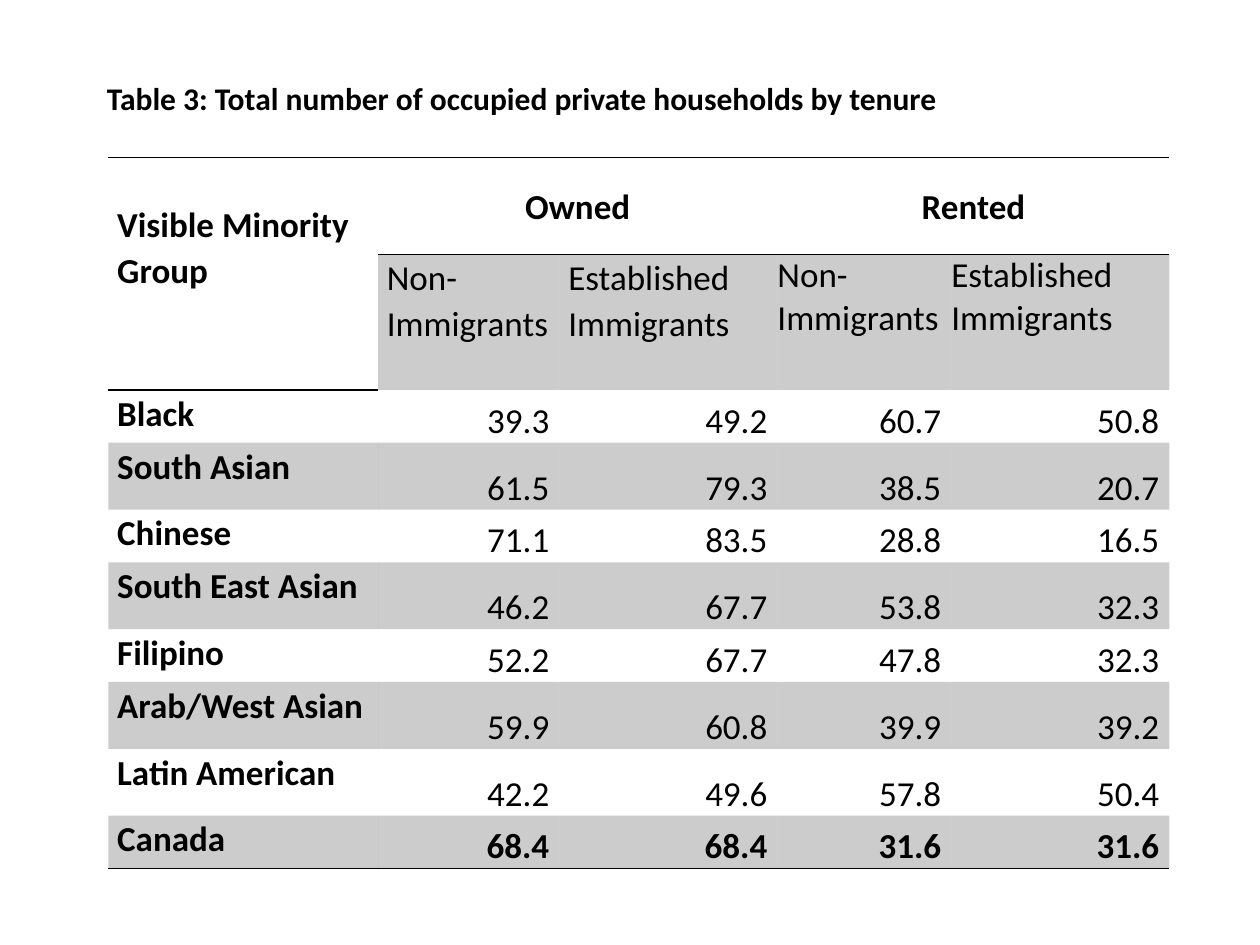
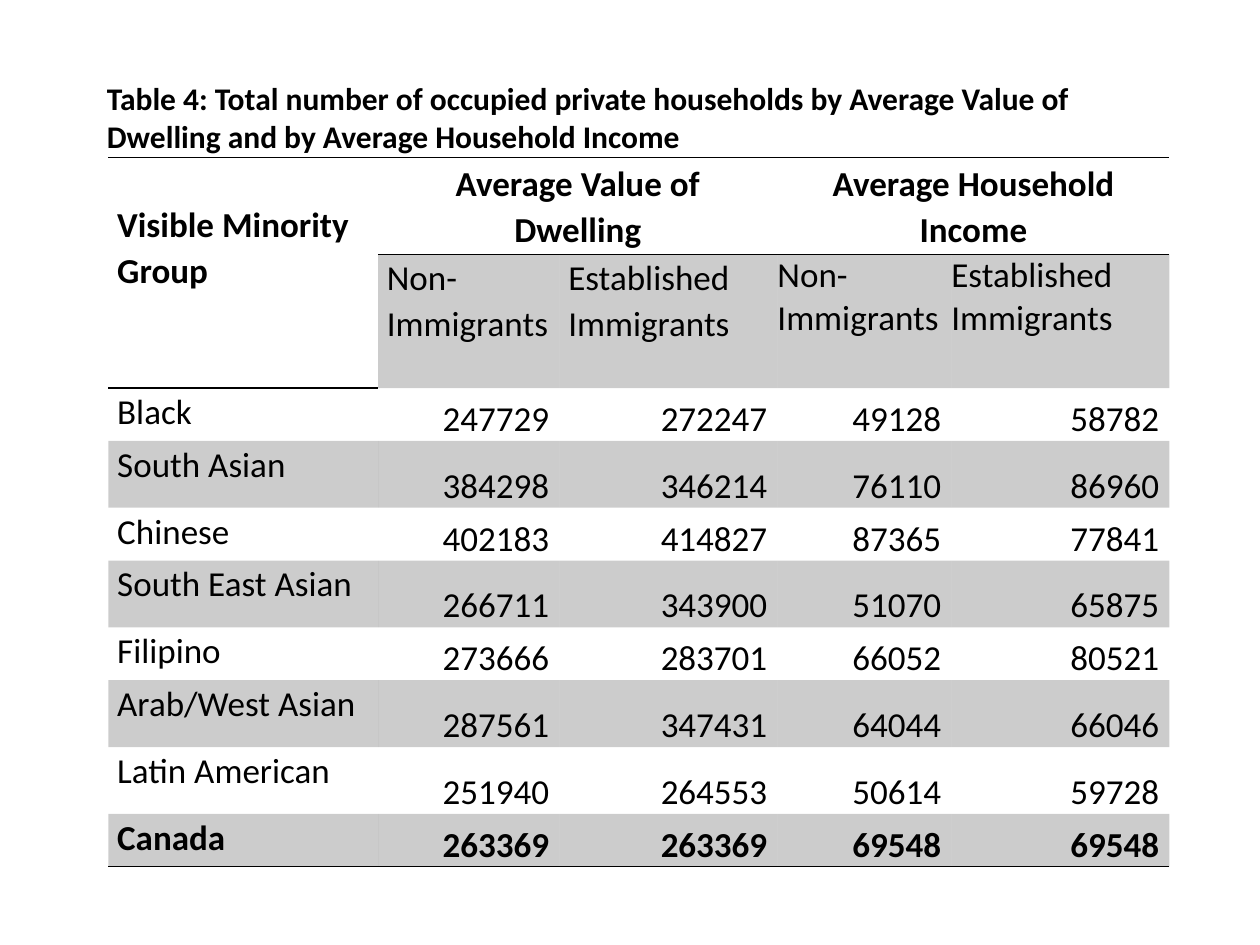
from lxml import etree
from pptx import Presentation
from pptx import util as u
from pptx.dml.color import RGBColor
from pptx.enum import text
from pptx.oxml import ns

# Shared look
BLACK = RGBColor(0, 0, 0)
FONT = "Calibri"
BAND_OPACITY = 20000
PLAIN_STYLE = "{2D5ABB26-0587-4C30-8999-92F81FD0307C}"
COLUMN_WIDTHS = [154.1, 103.7, 124.6, 99.4, 124.6]
ROW_HEIGHTS = [55.4, 55.4, 30.2, 38.2, 30.2, 38.2, 30.2, 38.2, 38.2, 30.2]
LOOSE = 1.07

LABEL_CELL = {"margin_left": u.Pt(5.1), "margin_right": u.Pt(5.1)}
GROUP_CELL = {**LABEL_CELL, "vertical_anchor": text.MSO_ANCHOR.MIDDLE}
CORNER_CELL = {**LABEL_CELL, "margin_top": u.Pt(25)}
TIGHT_CELL = {"margin_left": 0, "margin_right": 0}
NUMBER_CELL = {"margin_left": 0, "margin_right": u.Pt(5.8),
               "vertical_anchor": text.MSO_ANCHOR.BOTTOM}

# Content
MINORITY_GROUPS = ["Black", "South Asian", "Chinese", "South East Asian",
                   "Filipino", "Arab/West Asian", "Latin American", "Canada"]
TENURE = [
    ("39.3", "49.2", "60.7", "50.8"),
    ("61.5", "79.3", "38.5", "20.7"),
    ("71.1", "83.5", "28.8", "16.5"),
    ("46.2", "67.7", "53.8", "32.3"),
    ("52.2", "67.7", "47.8", "32.3"),
    ("59.9", "60.8", "39.9", "39.2"),
    ("42.2", "49.6", "57.8", "50.4"),
    ("68.4", "68.4", "31.6", "31.6"),
]
VALUE_AND_INCOME = [
    ("247729", "272247", "49128", "58782"),
    ("384298", "346214", "76110", "86960"),
    ("402183", "414827", "87365", "77841"),
    ("266711", "343900", "51070", "65875"),
    ("273666", "283701", "66052", "80521"),
    ("287561", "347431", "64044", "66046"),
    ("251940", "264553", "50614", "59728"),
    ("263369", "263369", "69548", "69548"),
]


def apply(target, values):
    for name, value in values.items():
        setattr(target, name, value)


def write(frame, wording, size, bold, **paragraph_format):
    """Fill a text frame, one paragraph per line of wording."""
    frame.text = wording
    for paragraph in frame.paragraphs:
        apply(paragraph, paragraph_format)
        for run in paragraph.runs:
            apply(run.font, {"size": u.Pt(size), "bold": bold, "name": FONT})
            run.font.color.rgb = BLACK


def fill_cell(cell, wording, cell_format, bold=False, **paragraph_format):
    apply(cell, {"margin_top": 0, "margin_bottom": 0, **cell_format})
    write(cell.text_frame, wording, 20, bold, **paragraph_format)


def rule(cell, *sides):
    """Draw 1 pt black borders; sides are T and B, in that order."""
    properties = cell._tc.get_or_add_tcPr()
    for side in sides:
        line = etree.SubElement(properties, ns.qn(f"a:ln{side}"), w=str(u.Pt(1)))
        solid = etree.SubElement(line, ns.qn("a:solidFill"))
        etree.SubElement(solid, ns.qn("a:srgbClr"), val=str(BLACK))


def shade(cell):
    cell.fill.solid()
    cell.fill.fore_color.rgb = BLACK
    color = cell._tc.tcPr.find(".//" + ns.qn("a:solidFill") + "[last()]")
    color = cell._tc.tcPr.findall(ns.qn("a:solidFill"))[0][0]
    etree.SubElement(color, ns.qn("a:alpha"), val=str(BAND_OPACITY))


def add_title(slide, wording, height):
    box = slide.shapes.add_textbox(u.Pt(54), u.Pt(41.8), u.Pt(622), u.Pt(height))
    apply(box.text_frame, {"word_wrap": True,
                           "auto_size": text.MSO_AUTO_SIZE.SHAPE_TO_FIT_TEXT})
    write(box.text_frame, wording, 18, True)


def add_grid(slide):
    """Add the empty table with its rules and grey bands."""
    grid = slide.shapes.add_table(
        len(ROW_HEIGHTS), len(COLUMN_WIDTHS), u.Pt(61.9), u.Pt(90),
        u.Pt(sum(COLUMN_WIDTHS)), u.Pt(sum(ROW_HEIGHTS))).table
    apply(grid, {"first_row": False, "horz_banding": False})
    grid._tbl.tblPr.find(ns.qn("a:tableStyleId")).text = PLAIN_STYLE
    for column, width in zip(grid.columns, COLUMN_WIDTHS):
        column.width = u.Pt(width)
    for row, height in zip(grid.rows, ROW_HEIGHTS):
        row.height = u.Pt(height)

    last = len(ROW_HEIGHTS) - 1
    for row in range(len(ROW_HEIGHTS)):
        for column in range(len(COLUMN_WIDTHS)):
            cell = grid.cell(row, column)
            if row == 0:
                rule(cell, "T", "B")
            elif row == last or (row, column) == (1, 0):
                rule(cell, "B")
            if row % 2 and (row, column) != (1, 0):
                shade(cell)
            else:
                cell.fill.background()
    return grid


def add_headings(grid, measures):
    grid.cell(0, 0).merge(grid.cell(1, 0))
    fill_cell(grid.cell(0, 0), "Visible Minority Group", CORNER_CELL, True,
              line_spacing=LOOSE)
    for column, measure in zip((1, 3), measures):
        grid.cell(0, column).merge(grid.cell(0, column + 1))
        fill_cell(grid.cell(0, column), measure, GROUP_CELL, True,
                  alignment=text.PP_ALIGN.CENTER, line_spacing=LOOSE)
    for column, origin in enumerate(("Non-\nImmigrants", "Established Immigrants"), 1):
        fill_cell(grid.cell(1, column), origin, LABEL_CELL, line_spacing=LOOSE)
        fill_cell(grid.cell(1, column + 2), origin.replace("\n", ""), TIGHT_CELL)


def add_figures(grid, figures, bold_groups):
    for row, (group, numbers) in enumerate(zip(MINORITY_GROUPS, figures), 2):
        is_total = group == "Canada"
        fill_cell(grid.cell(row, 0), group, LABEL_CELL, bold_groups or is_total,
                  line_spacing=LOOSE)
        for column, number in enumerate(numbers, 1):
            fill_cell(grid.cell(row, column), number, NUMBER_CELL, is_total,
                      alignment=text.PP_ALIGN.RIGHT)


def add_table_slide(deck, title, title_height, measures, figures, bold_groups):
    slide = deck.slides.add_slide(deck.slide_layouts[6])
    grid = add_grid(slide)
    add_headings(grid, measures)
    add_figures(grid, figures, bold_groups)
    add_title(slide, title, title_height)


def main():
    deck = Presentation()
    apply(deck, {"slide_width": u.Pt(720), "slide_height": u.Pt(540)})

    # Table 3: tenure
    add_table_slide(
        deck, "Table 3: Total number of occupied private households by tenure",
        28.8, ("Owned", "Rented"), TENURE, bold_groups=True)

    # Table 4: dwelling value and income
    add_table_slide(
        deck, "Table 4: Total number of occupied private households by "
        "Average Value of Dwelling and by Average Household Income",
        51.1, ("Average Value of\nDwelling", "Average Household Income"),
        VALUE_AND_INCOME, bold_groups=False)

    deck.save("out.pptx")


if __name__ == "__main__":
    main()
